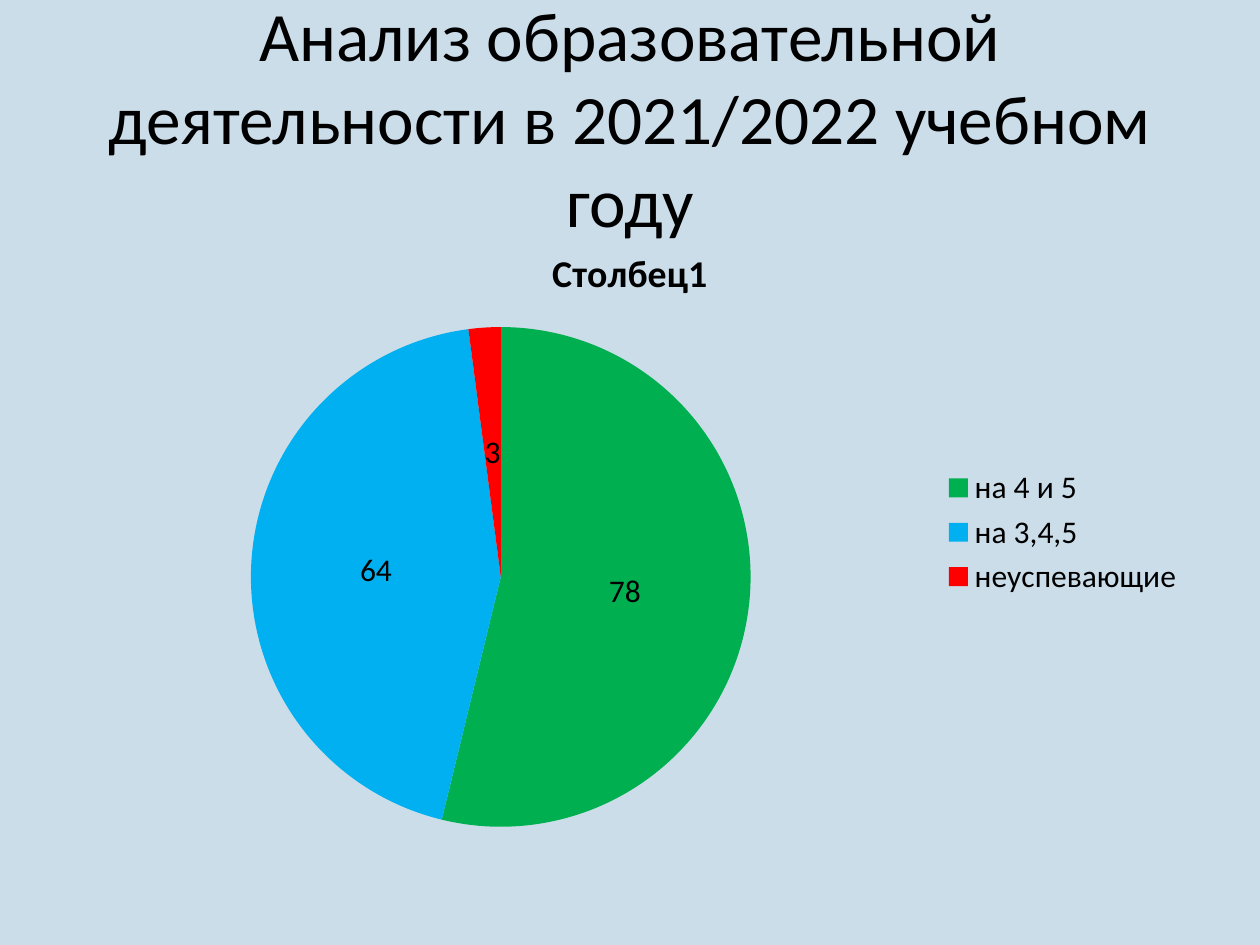
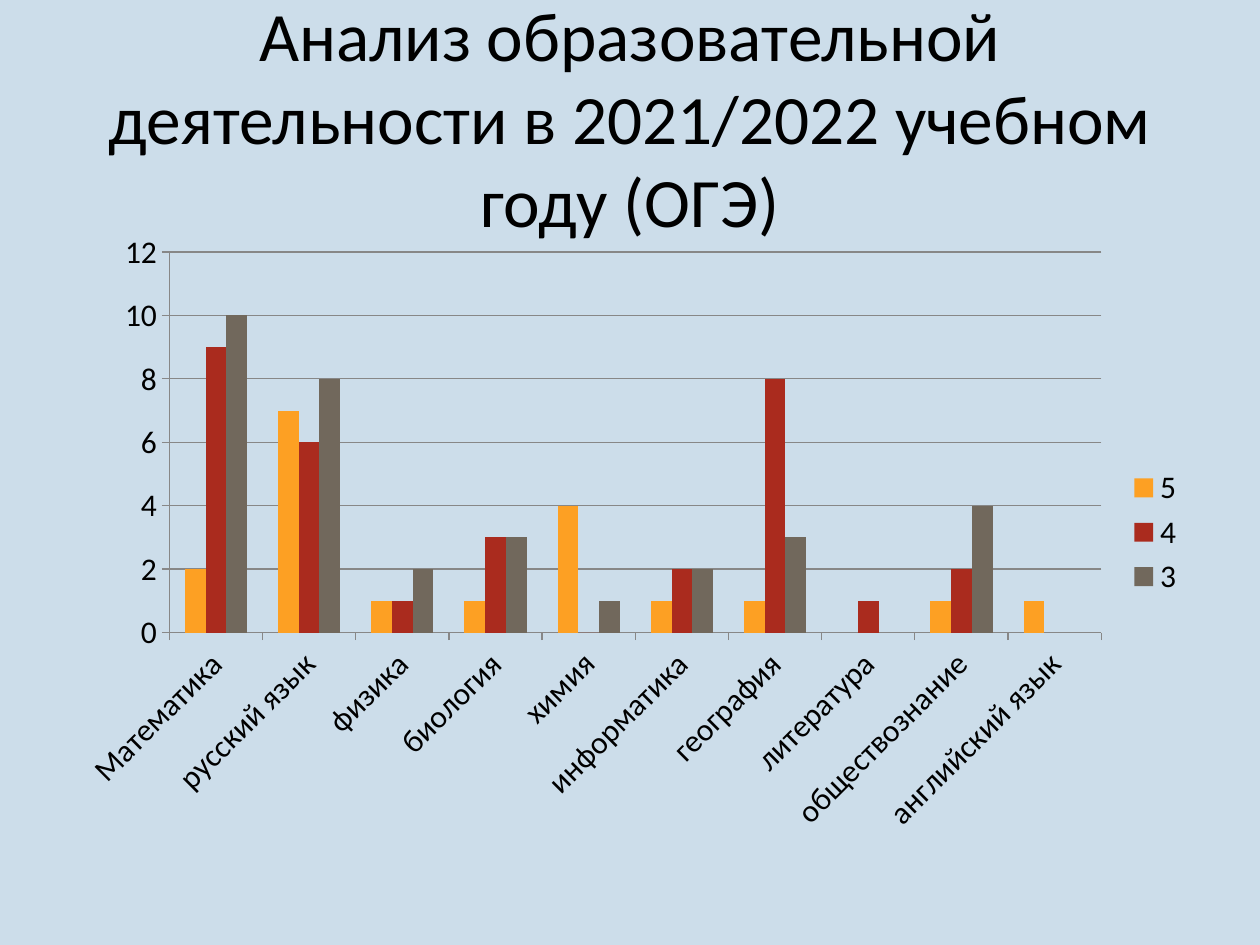
from dataclasses import dataclass

from pptx import Presentation
from pptx.chart.chart import Chart
from pptx.chart.data import CategoryChartData
from pptx.dml.color import RGBColor
from pptx.enum.chart import XL_CHART_TYPE, XL_LABEL_POSITION, XL_LEGEND_POSITION, XL_TICK_MARK
from pptx.enum.text import MSO_ANCHOR, PP_ALIGN
from pptx.slide import Slide
from pptx.text.text import TextFrame
from pptx.util import Inches, Pt


@dataclass(frozen=True)
class Theme:
    """Colours, font and type sizes of the presentation."""

    background: str = "CCDDEA"
    text: str = "000000"
    axis: str = "878787"
    font: str = "Calibri"
    title_size: float = 39.6
    chart_title_size: float = 21.6
    chart_size: float = 18


@dataclass(frozen=True)
class Series:
    """One named row of chart values."""

    name: str
    values: tuple[int | None, ...]
    color: str | None = None


@dataclass(frozen=True)
class ChartSlide:
    """A heading with one chart below it."""

    title: str
    chart_type: XL_CHART_TYPE
    categories: tuple[str, ...]
    series: tuple[Series, ...]


THEME = Theme()
HEADING = "Анализ образовательной деятельности в 2021/2022 учебном году"
PIE_COLORS = ("00B050", "00B0F0", "FF0000")

RESULTS = ChartSlide(
    HEADING,
    XL_CHART_TYPE.PIE,
    ("на 4 и 5", "на 3,4,5", "неуспевающие"),
    (Series("Столбец1", (78, 64, 3)),),
)
EXAMS = ChartSlide(
    f"{HEADING} (ОГЭ)",
    XL_CHART_TYPE.COLUMN_CLUSTERED,
    ("Математика", "русский язык", "физика", "биология", "химия", "информатика",
     "география", "литература", "обществознание", "английский язык"),
    (
        Series("5", (2, 7, 1, 1, 4, 1, 1, None, 1, 1), "FDA023"),
        Series("4", (9, 6, 1, 3, 0, 2, 8, 1, 2, None), "AA2B1E"),
        Series("3", (10, 8, 2, 3, 1, 2, 3, None, 4, None), "71685C"),
    ),
)


def write_text(frame: TextFrame, text: str, *, size: float, bold: bool = False) -> None:
    """Write one centred paragraph in the theme font."""
    paragraph = frame.paragraphs[0]
    paragraph.alignment = PP_ALIGN.CENTER
    run = paragraph.add_run()
    run.text = text
    run.font.name = THEME.font
    run.font.size = Pt(size)
    run.font.bold = bold
    run.font.color.rgb = RGBColor.from_string(THEME.text)


def paint(target, color: str) -> None:
    """Fill a series or a point with a solid colour."""
    target.format.fill.solid()
    target.format.fill.fore_color.rgb = RGBColor.from_string(color)


def add_title(slide: Slide, text: str) -> None:
    """Add the heading at the top of the slide."""
    box = slide.shapes.add_textbox(Inches(0.5), Inches(0.3), Inches(9), Inches(1.25))
    box.text_frame.word_wrap = True
    box.text_frame.vertical_anchor = MSO_ANCHOR.MIDDLE
    write_text(box.text_frame, text, size=THEME.title_size)


def add_chart(slide: Slide, content: ChartSlide) -> Chart:
    """Add a chart with the shared font and a legend on the right."""
    data = CategoryChartData()
    data.categories = content.categories
    for series in content.series:
        data.add_series(series.name, series.values)
    chart = slide.shapes.add_chart(
        content.chart_type, Inches(0.5), Inches(1.75), Inches(9), Inches(4.95), data
    ).chart
    chart.font.name = THEME.font
    chart.font.size = Pt(THEME.chart_size)
    chart.font.color.rgb = RGBColor.from_string(THEME.text)
    chart.has_title = False
    chart.has_legend = True
    chart.legend.position = XL_LEGEND_POSITION.RIGHT
    chart.legend.include_in_layout = False
    return chart


def style_pie(chart: Chart, content: ChartSlide) -> None:
    """Give the pie its title, slice colours and value labels."""
    chart.has_title = True
    write_text(chart.chart_title.text_frame, content.series[0].name,
               size=THEME.chart_title_size, bold=True)
    chart.chart_title.include_in_layout = False
    plot = chart.plots[0]
    plot.vary_by_categories = True
    for index, color in enumerate(PIE_COLORS):
        paint(plot.series[0].points[index], color)
    plot.has_data_labels = True
    plot.data_labels.show_value = True
    plot.data_labels.show_percentage = False
    plot.data_labels.position = XL_LABEL_POSITION.CENTER


def style_columns(chart: Chart, content: ChartSlide) -> None:
    """Give the columns their colours, axes and gridlines."""
    plot = chart.plots[0]
    plot.vary_by_categories = False
    plot.gap_width = 150
    for series, source in zip(plot.series, content.series):
        paint(series, source.color)
    chart.value_axis.has_major_gridlines = True
    for axis in (chart.category_axis, chart.value_axis):
        axis.major_tick_mark = XL_TICK_MARK.OUTSIDE
        axis.minor_tick_mark = XL_TICK_MARK.NONE
    for part in (chart.category_axis, chart.value_axis, chart.value_axis.major_gridlines):
        part.format.line.color.rgb = RGBColor.from_string(THEME.axis)
        part.format.line.width = Pt(0.75)


def main() -> None:
    """Build and save the presentation."""
    presentation = Presentation()
    presentation.slide_width = Inches(10)
    presentation.slide_height = Inches(7.5)
    for content, style in ((RESULTS, style_pie), (EXAMS, style_columns)):
        slide = presentation.slides.add_slide(presentation.slide_layouts[6])
        slide.background.fill.solid()
        slide.background.fill.fore_color.rgb = RGBColor.from_string(THEME.background)
        add_title(slide, content.title)
        style(add_chart(slide, content), content)
    presentation.save("out.pptx")


if __name__ == "__main__":
    main()
